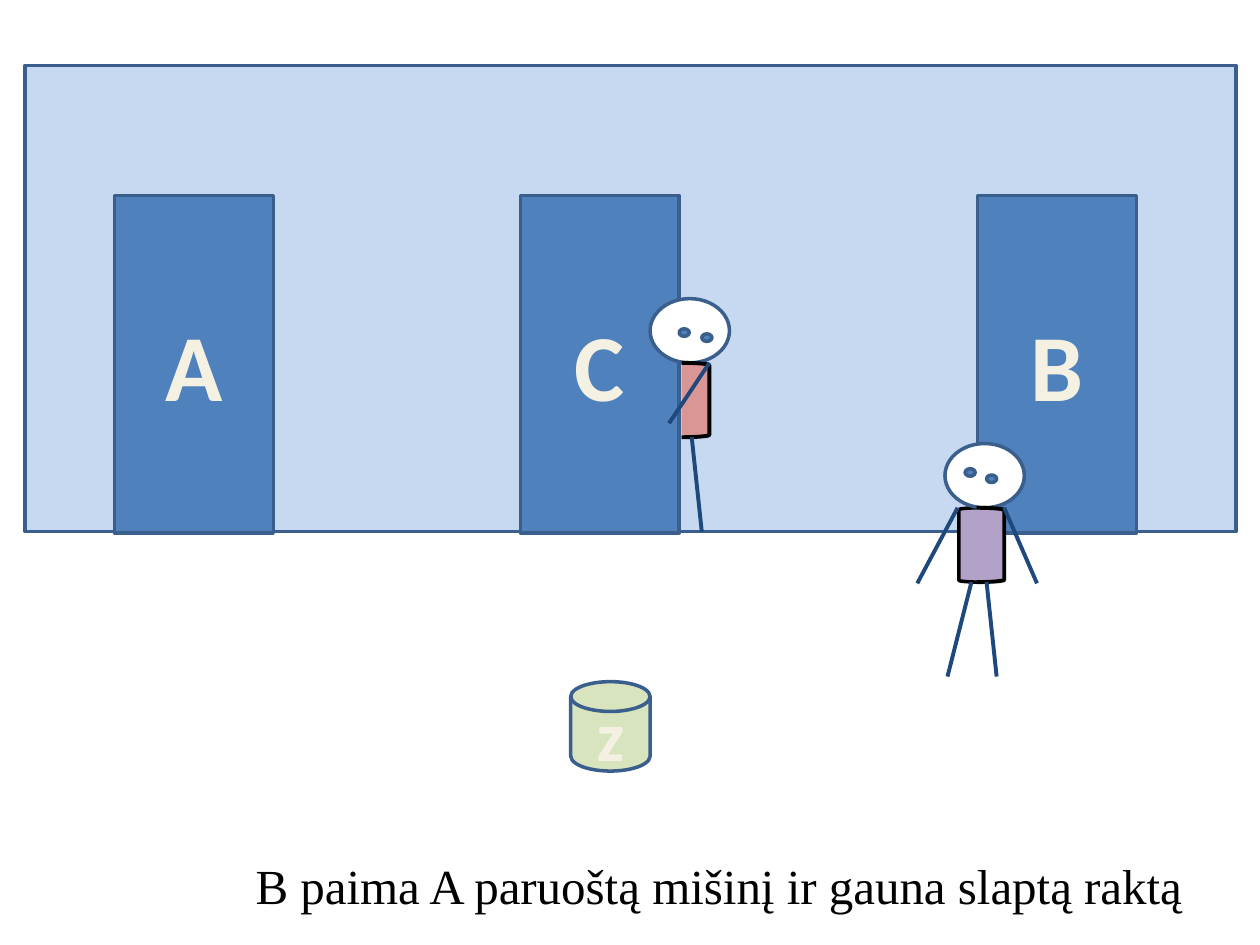
from pptx import Presentation
from pptx.dml.color import RGBColor
from pptx.enum.shapes import MSO_CONNECTOR, MSO_SHAPE
from pptx.enum.text import MSO_ANCHOR, PP_ALIGN
from pptx.oxml.ns import qn
from pptx.util import Inches, Pt
from lxml.etree import SubElement

COLORS = {
    "wall": "C6D9F1", "door": "4F81BD", "edge": "3A5F8C", "letter": "F4F1E3",
    "jar": "D7E4BD", "head": "FFFFFF", "limb": "1F497D", "outline": "000000",
    "rose": "D99694", "violet": "B3A2C7",
}


def color(name):
    return RGBColor.from_string(COLORS[name])


def add_part(shapes, kind, box, fill, line="edge", weight=2):
    part = shapes.add_shape(kind, *(Inches(length) for length in box))
    part.shadow.inherit = False
    part.fill.solid()
    part.fill.fore_color.rgb = color(fill)
    part.line.color.rgb = color(line)
    part.line.width = Pt(weight)
    return part


def add_letter(part, letter, size):
    frame = part.text_frame
    frame.text = letter
    frame.vertical_anchor = MSO_ANCHOR.MIDDLE
    para = frame.paragraphs[0]
    para.alignment = PP_ALIGN.CENTER
    font = para.runs[0].font
    font.name, font.size, font.bold = "Calibri", Pt(size), True
    font.color.rgb = color("letter")


def add_limb(shapes, start, end):
    limb = shapes.add_connector(
        MSO_CONNECTOR.STRAIGHT, *(Inches(length) for length in start + end))
    limb.line.color.rgb = color("limb")
    limb.line.width = Pt(2.25)
    SubElement(limb._element.spPr, qn("a:effectLst"))


def add_building(shapes, left, top, width, height):
    """Draw the wall and its three lettered doors."""
    add_part(shapes, MSO_SHAPE.RECTANGLE, (left, top, width, height), "wall")
    for letter, offset in (("A", 0.71), ("B", 7.56), ("C", 3.93)):
        door = add_part(shapes, MSO_SHAPE.RECTANGLE,
                        (left + offset, top + 1.03, 1.26, 2.68), "door")
        add_letter(door, letter, 54)


def add_jar(shapes, box):
    jar = add_part(shapes, MSO_SHAPE.FLOWCHART_MAGNETIC_DISK, box, "jar")
    add_letter(jar, "z", 40)


def add_person(shapes, left, top, shirt, eyes, limbs, whole=True):
    """Draw a person from the top left of the head; if not whole, half the body is hidden."""
    if whole:
        add_part(shapes, MSO_SHAPE.LEFT_BRACKET,
                 (left + 0.11, top + 0.51, 0.18, 0.59), shirt, "outline")
    add_part(shapes, MSO_SHAPE.OVAL, (left, top, 0.63, 0.51), "head")
    for across, down in eyes:
        add_part(shapes, MSO_SHAPE.OVAL,
                 (left + across, top + down, 0.08, 0.06), "door")
    add_part(shapes, MSO_SHAPE.RIGHT_BRACKET,
             (left + 0.25, top + 0.51, 0.22, 0.59), shirt, "outline", 2.25)
    for x1, y1, x2, y2 in limbs:
        add_limb(shapes, (left + x1, top + y1), (left + x2, top + y2))


def add_caption(shapes, box, text):
    caption = shapes.add_textbox(*(Inches(length) for length in box))
    frame = caption.text_frame
    frame.word_wrap = True
    frame.text = text
    font = frame.paragraphs[0].runs[0].font
    font.name, font.size = "Times New Roman", Pt(28)
    font.color.rgb = color("outline")


def main():
    deck = Presentation()
    deck.slide_width, deck.slide_height = Inches(10), Inches(7.5)
    shapes = deck.slides.add_slide(deck.slide_layouts[6]).shapes

    add_building(shapes, 0.2, 0.52, 9.61, 3.7)
    add_jar(shapes, (4.53, 5.41, 0.63, 0.71))

    right_leg = (0.33, 1.1, 0.41, 1.85)
    add_person(shapes.add_group_shape().shapes, 7.5, 3.52, "violet",
               eyes=((0.16, 0.2), (0.33, 0.25)),
               limbs=(right_leg, (0.47, 0.51, 0.73, 1.11),
                      (0.21, 1.1, 0.02, 1.85), (0.1, 0.51, -0.22, 1.11)))
    add_person(shapes, 5.16, 2.37, "rose",
               eyes=((0.23, 0.24), (0.41, 0.28)),
               limbs=(right_leg, (0.47, 0.51, 0.15, 0.99)), whole=False)

    add_caption(shapes, (1.93, 6.74, 7.79, 0.57),
                "B paima A paruoštą mišinį ir gauna slaptą raktą")
    deck.save("out.pptx")


if __name__ == "__main__":
    main()
